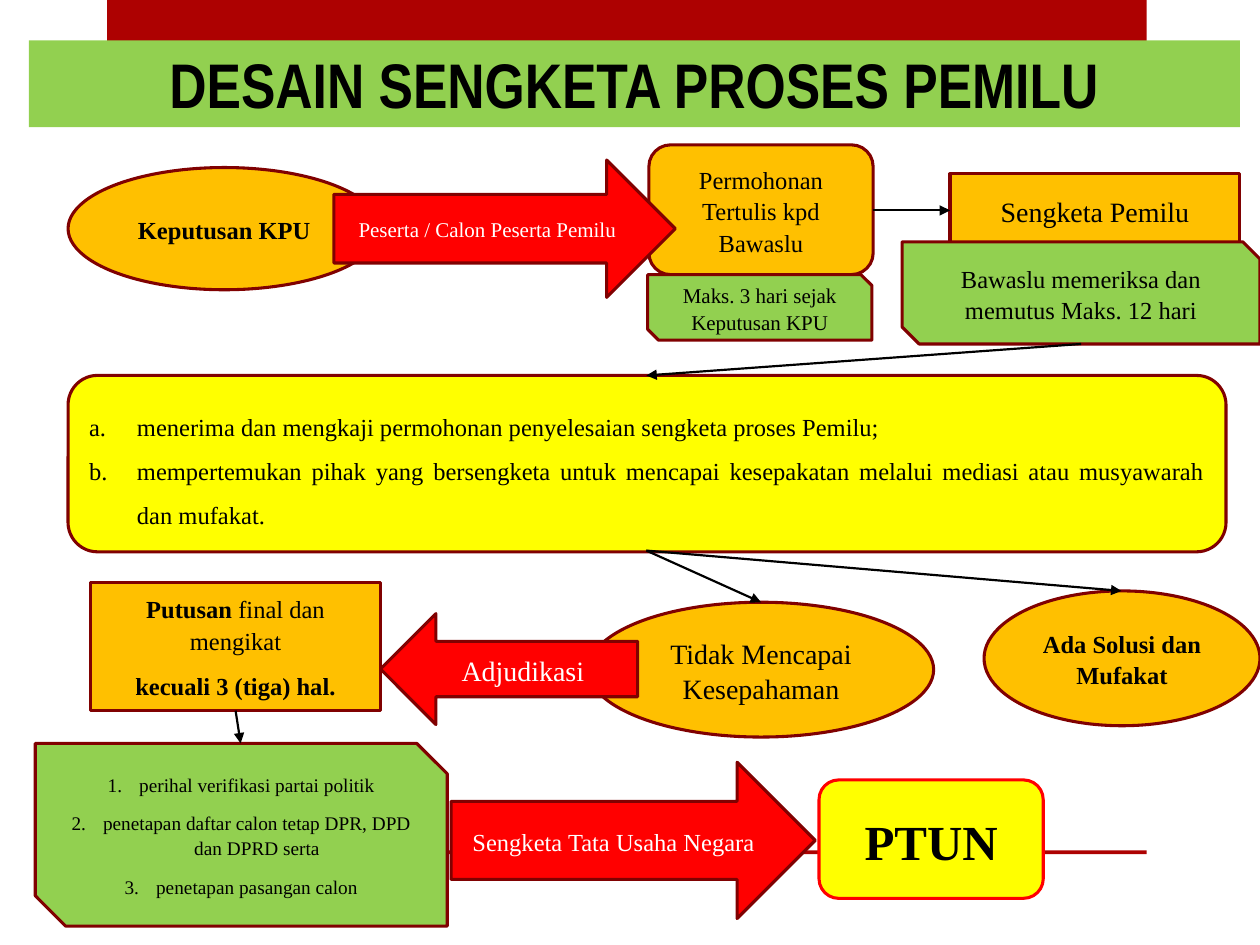
from lxml.etree import SubElement
from pptx import Presentation
from pptx.dml.color import RGBColor
from pptx.enum.shapes import MSO_CONNECTOR, MSO_SHAPE
from pptx.enum.text import MSO_ANCHOR, MSO_AUTO_SIZE, PP_ALIGN
from pptx.oxml.ns import qn
from pptx.util import Inches, Pt

COLORS = {
    "band": "AD0101",
    "outline": "800101",
    "orange": "FFC000",
    "green": "92D050",
    "yellow": "FFFF00",
    "red": "FF0000",
    "black": "000000",
    "white": "FFFFFF",
}
BODY_FONT = "Times New Roman"
TITLE_FONT = "Arial Narrow"


def color(name):
    return RGBColor.from_string(COLORS[name])


def inches(values):
    return [Inches(value) for value in values]


def format_run(run, font, size, ink, bold):
    run.font.name = font
    run.font.size = Pt(size)
    run.font.color.rgb = color(ink)
    run.font.bold = bold


def add_band(slide, box):
    band = slide.shapes.add_shape(MSO_SHAPE.RECTANGLE, *inches(box))
    band.shadow.inherit = False
    band.fill.solid()
    band.fill.fore_color.rgb = color("band")
    band.line.fill.background()


def place_title(slide, text, box):
    title = slide.shapes.title
    title.left, title.top, title.width, title.height = inches(box)
    title.fill.solid()
    title.fill.fore_color.rgb = color("green")
    frame = title.text_frame
    frame.text = text
    frame.auto_size = MSO_AUTO_SIZE.NONE
    frame.vertical_anchor = MSO_ANCHOR.MIDDLE
    frame.paragraphs[0].alignment = PP_ALIGN.CENTER
    format_run(frame.paragraphs[0].runs[0], TITLE_FONT, 36, "black", True)
    slide.shapes._spTree.append(title._element)


def add_step(slide, preset, box, fill, text, size=14, ink="black", bold=False,
             outline="outline", align=PP_ALIGN.CENTER, spacing=1.07, after=8):
    step = slide.shapes.add_shape(preset, *inches(box))
    step.shadow.inherit = False
    step.fill.solid()
    step.fill.fore_color.rgb = color(fill)
    step.line.color.rgb = color(outline)
    step.line.width = Pt(1.75)
    frame = step.text_frame
    frame.word_wrap = True
    frame.vertical_anchor = MSO_ANCHOR.MIDDLE
    frame.text = text
    for paragraph in frame.paragraphs:
        paragraph.alignment = align
        paragraph.line_spacing = spacing
        paragraph.space_after = Pt(after)
        for run in paragraph.runs:
            format_run(run, BODY_FONT, size, ink, bold)
    return step


def number_paragraphs(step, scheme, indent):
    for paragraph in step.text_frame.paragraphs:
        properties = paragraph._p.get_or_add_pPr()
        properties.set("marL", str(Inches(indent)))
        properties.set("indent", str(-Inches(indent)))
        SubElement(properties, qn("a:buAutoNum"), type=scheme)


def add_ruling(slide, box):
    ruling = add_step(slide, MSO_SHAPE.RECTANGLE, box, "orange",
                      "Putusan\nkecuali 3 (tiga) hal.", bold=True)
    remainder = ruling.text_frame.paragraphs[0].add_run()
    remainder.text = " final dan mengikat"
    format_run(remainder, BODY_FONT, 14, "black", False)


def add_arrow(slide, start, end):
    arrow = slide.shapes.add_connector(MSO_CONNECTOR.STRAIGHT, *inches(start + end))
    arrow.line.color.rgb = color("black")
    arrow.line.width = Pt(1.25)
    SubElement(arrow.line._get_or_add_ln(), qn("a:tailEnd"), type="triangle")
    SubElement(arrow._element.spPr, qn("a:effectLst"))


def add_application(slide):
    add_step(slide, MSO_SHAPE.ROUNDED_RECTANGLE, (5.15, 1.15, 1.78, 1.03), "orange",
             "Permohonan Tertulis kpd Bawaslu")
    add_step(slide, MSO_SHAPE.OVAL, (0.54, 1.33, 2.48, 0.97), "orange",
             "Keputusan KPU", bold=True)
    add_step(slide, MSO_SHAPE.RIGHT_ARROW, (2.65, 1.27, 2.71, 1.09), "red",
             "Peserta / Calon Peserta Pemilu", 12, "white")
    add_step(slide, MSO_SHAPE.RECTANGLE, (7.54, 1.38, 2.3, 0.58), "orange",
             "Sengketa Pemilu", 16)
    add_step(slide, MSO_SHAPE.SNIP_2_DIAG_RECTANGLE, (5.14, 2.18, 1.78, 0.52), "green",
             "Maks. 3 hari sejak Keputusan KPU", 12)
    add_step(slide, MSO_SHAPE.SNIP_2_DIAG_RECTANGLE, (7.16, 1.92, 2.84, 0.81), "green",
             "Bawaslu memeriksa dan memutus Maks. 12 hari")


def add_mediation(slide):
    duties = add_step(
        slide, MSO_SHAPE.ROUNDED_RECTANGLE, (0.54, 2.98, 9.19, 1.4), "yellow",
        "menerima dan mengkaji permohonan penyelesaian sengketa proses Pemilu;\n"
        "mempertemukan pihak yang bersengketa untuk mencapai kesepakatan "
        "melalui mediasi atau musyawarah dan mufakat.",
        align=PP_ALIGN.JUSTIFY, spacing=1.5, after=0)
    number_paragraphs(duties, "alphaLcPeriod", 0.38)
    add_arrow(slide, (6.93, 1.67), (7.54, 1.67))
    add_arrow(slide, (8.58, 2.73), (5.13, 2.98))


def add_outcomes(slide):
    mediation_exit = (5.13, 4.37)
    add_step(slide, MSO_SHAPE.OVAL, (7.81, 4.69, 2.19, 1.07), "orange",
             "Ada Solusi dan Mufakat", bold=True)
    add_arrow(slide, mediation_exit, (8.9, 4.69))
    add_step(slide, MSO_SHAPE.OVAL, (4.67, 4.78, 2.74, 1.07), "orange",
             "Tidak Mencapai Kesepahaman", 16)
    add_arrow(slide, mediation_exit, (6.04, 4.78))
    add_step(slide, MSO_SHAPE.LEFT_ARROW, (3.02, 4.87, 2.04, 0.88), "red",
             "Adjudikasi", 16, "white")
    add_ruling(slide, (0.72, 4.62, 2.3, 1.02))


def add_appeal(slide):
    exceptions = add_step(
        slide, MSO_SHAPE.SNIP_2_DIAG_RECTANGLE, (0.28, 5.9, 3.27, 1.45), "green",
        "perihal verifikasi partai politik\n"
        "penetapan daftar calon tetap DPR, DPD dan DPRD serta\n"
        "penetapan pasangan calon", 11)
    number_paragraphs(exceptions, "arabicPeriod", 0.25)
    add_step(slide, MSO_SHAPE.RIGHT_ARROW, (3.58, 6.05, 2.89, 1.24), "red",
             "Sengketa Tata Usaha Negara", ink="white")
    add_step(slide, MSO_SHAPE.ROUNDED_RECTANGLE, (6.5, 6.19, 1.78, 0.94), "yellow",
             "PTUN", 28, bold=True, outline="red")
    add_arrow(slide, (1.87, 5.64), (1.91, 5.9))


def main():
    presentation = Presentation()
    presentation.slide_width, presentation.slide_height = inches((10, 7.5))
    slide = presentation.slides.add_slide(presentation.slide_layouts[5])
    add_band(slide, (0.85, 0, 8.25, 0.42))
    add_band(slide, (0.85, 6.75, 8.25, 0.03))
    place_title(slide, "DESAIN SENGKETA PROSES PEMILU", (0.23, 0.32, 9.61, 0.69))
    add_application(slide)
    add_mediation(slide)
    add_outcomes(slide)
    add_appeal(slide)
    presentation.save("out.pptx")


if __name__ == "__main__":
    main()
